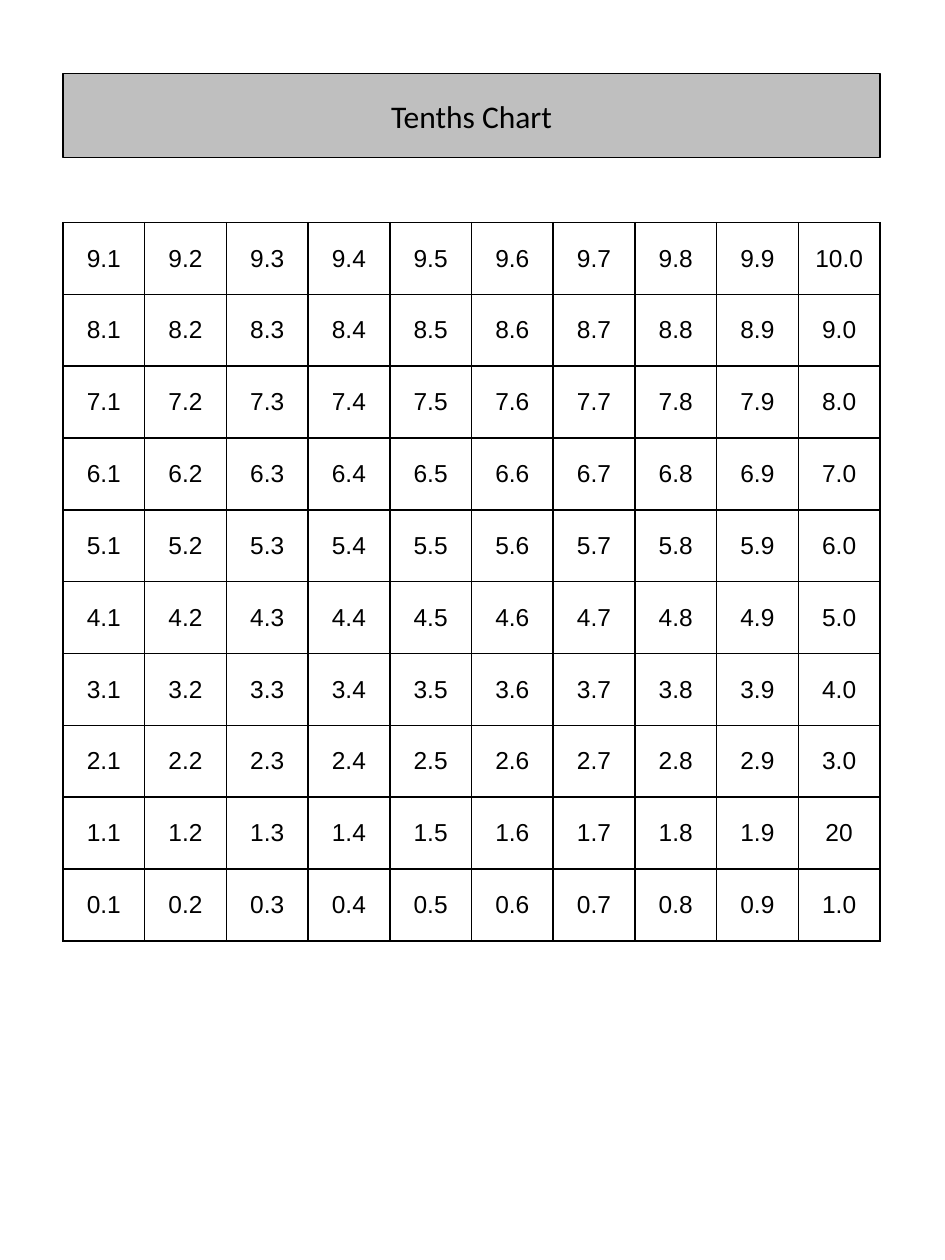
import pptx
import pptx.dml.color
import pptx.enum.shapes
import pptx.enum.text
import pptx.oxml
import pptx.oxml.ns
import pptx.util

Pt = pptx.util.Pt
LEFT = 36
WIDTH = 467


def color(code):
    return pptx.dml.color.RGBColor.from_string(code)


def write(frame, text, font="Arial", size=14, ink="000000"):
    """Put one centred paragraph into a text frame."""
    par = frame.paragraphs[0]
    par.alignment = pptx.enum.text.PP_ALIGN.CENTER
    run = par.add_run()
    run.text = text
    run.font.name = font
    run.font.size = Pt(size)
    run.font.color.rgb = color(ink)


def edge(cell, ink, width):
    """Draw all four borders of a table cell."""
    props = cell._tc.get_or_add_tcPr()
    for spot, side in enumerate(("lnL", "lnR", "lnT", "lnB")):
        line = pptx.oxml.parse_xml(
            f'<a:{side} {pptx.oxml.ns.nsdecls("a")} w="{Pt(width)}">'
            f'<a:solidFill><a:srgbClr val="{ink}"/></a:solidFill></a:{side}>'
        )
        props.insert(spot, line)


class Page:
    """Holds the slide and the style its elements share."""

    def __init__(self, slide, ink="000000", line=1):
        self.slide = slide
        self.ink = ink
        self.line = line

    def banner(self, text, top, height, fill):
        kind = pptx.enum.shapes.MSO_SHAPE.RECTANGLE
        box = self.slide.shapes.add_shape(
            kind, Pt(LEFT), Pt(top), Pt(WIDTH), Pt(height))
        box.shadow.inherit = False
        box.fill.solid()
        box.fill.fore_color.rgb = color(fill)
        box.line.color.rgb = color(self.ink)
        box.line.width = Pt(self.line)
        box.text_frame.word_wrap = True
        box.text_frame.vertical_anchor = pptx.enum.text.MSO_ANCHOR.MIDDLE
        write(box.text_frame, text, font="Calibri", size=18, ink=self.ink)

    def grid(self, rows, top, height):
        table = self.slide.shapes.add_table(
            len(rows), len(rows[0]),
            Pt(LEFT), Pt(top), Pt(WIDTH), Pt(height)).table
        table.first_row = table.horz_banding = False
        for r, row in enumerate(rows):
            for c, text in enumerate(row):
                cell = table.cell(r, c)
                cell.fill.background()
                cell.vertical_anchor = pptx.enum.text.MSO_ANCHOR.MIDDLE
                edge(cell, self.ink, self.line)
                write(cell.text_frame, text, ink=self.ink)


def main():
    deck = pptx.Presentation()
    deck.slide_width, deck.slide_height = Pt(540), Pt(720)
    page = Page(deck.slides.add_slide(deck.slide_layouts[6]))

    tenths = [[f"{whole + part / 10:.1f}" for part in range(1, 11)]
              for whole in range(9, -1, -1)]
    tenths[8][9] = "20"  # the chart shows this cell without its point
    page.grid(tenths, top=127.2, height=410.6)
    page.banner("Tenths Chart", top=42, height=48, fill="BFBFBF")

    deck.save("out.pptx")


if __name__ == "__main__":
    main()
